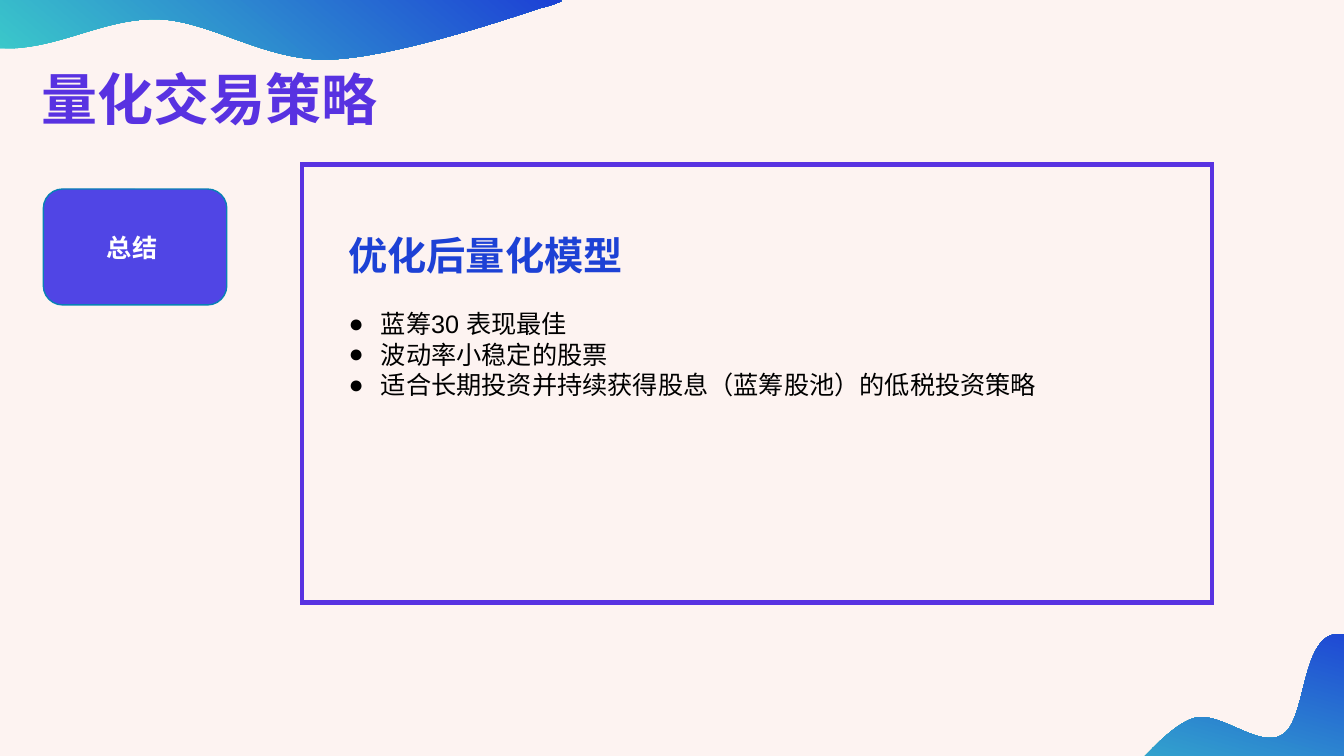
from dataclasses import dataclass
from math import cos, radians, sin

from lxml import etree
from pptx import Presentation
from pptx.dml.color import RGBColor
from pptx.enum.shapes import MSO_SHAPE
from pptx.enum.text import MSO_ANCHOR, MSO_AUTO_SIZE, PP_ALIGN
from pptx.oxml.ns import qn
from pptx.util import Emu, Inches, Pt

RECTANGLE, ROUNDED = MSO_SHAPE.RECTANGLE, MSO_SHAPE.ROUNDED_RECTANGLE
TOP, MIDDLE = MSO_ANCHOR.TOP, MSO_ANCHOR.MIDDLE
LEFT, CENTER = PP_ALIGN.LEFT, PP_ALIGN.CENTER
FIXED = MSO_AUTO_SIZE.NONE

CELL = Inches(0.1)
COLUMNS, ROWS = 133.33, 75
INDENT = Inches(0.32)

Point = tuple[float, float]
Curve = tuple[Point, Point, Point]


@dataclass(frozen=True)
class Theme:
    background: str = "FDF3F1"
    violet: str = "5832E1"
    indigo: str = "5045E5"
    edge: str = "0881B5"
    teal: str = "3BCACA"
    blue: str = "1D41D5"
    white: str = "FFFFFF"
    black: str = "000000"
    title_font: str = "Times New Roman"
    body_font: str = "Arial"
    title_size: float = 40
    heading_size: float = 28
    body_size: float = 18
    list_gap: float = 21.4
    gradient_angle: float = 50


THEME = Theme()


@dataclass(frozen=True)
class Area:
    column: float
    row: float
    columns: float
    rows: float

    def lengths(self) -> list[Emu]:
        return [grid(n) for n in (self.column, self.row, self.columns, self.rows)]


@dataclass(frozen=True)
class Panel:
    kind: MSO_SHAPE
    area: Area
    line: str
    weight: float
    fill: str | None = None
    label: str | None = None


@dataclass(frozen=True)
class Wave:
    start: Point
    curves: tuple[Curve, ...]
    corners: tuple[Point, ...]
    turn: float = 0


@dataclass(frozen=True)
class Line:
    text: str
    size: float
    color: str
    bold: bool = False
    bullet: bool = False
    before: float = 0


WAVES = (
    Wave(
        (55.7, 0.1),
        (
            ((55.5, 0.2), (54.9, 0.5), (53.6, 0.8)),
            ((50.3, 1.9), (39, 5.7), (32.7, 5.9)),
            ((26.3, 6.1), (21, 2.1), (15.7, 1.9)),
            ((10.5, 1.8), (6.5, 4.5), (1.3, 4.8)),
        ),
        ((0, 4.8), (0, 0), (55.6, 0)),
    ),
    Wave(
        (113.4, 75.2),
        (
            ((115.2, 73.3), (117, 71.6), (118.6, 71.2)),
            ((121.1, 70.6), (125, 74.3), (127.2, 72.9)),
            ((129.5, 71.6), (129.1, 64), (132.1, 63)),
            ((132.3, 63), (132.5, 62.9), (132.7, 62.9)),
        ),
        ((COLUMNS, 62.9), (COLUMNS, 75.2)),
        turn=336,
    ),
)
PANELS = (
    Panel(ROUNDED, Area(4.3, 18.75, 18.2, 11.5), THEME.edge, 1, THEME.indigo, "总结 "),
    Panel(RECTANGLE, Area(29.95, 16.3, 90.3, 43.5), THEME.violet, 3.25),
)
TITLE_AREA = Area(3.1, 5.9, 63, 7.7)
SUMMARY_AREA = Area(33.6, 22.5, 75, 23.9)
POINTS = ("蓝筹30 表现最佳", "波动率小稳定的股票", "适合长期投资并持续获得股息（蓝筹股池）的低税投资策略")
SUMMARY = [Line("优化后量化模型", THEME.heading_size, THEME.blue, bold=True)] + [
    Line(text, THEME.body_size, THEME.black, bullet=True, before=0 if n else THEME.list_gap)
    for n, text in enumerate(POINTS)
]


def grid(cells: float) -> Emu:
    return Emu(round(cells * CELL))


def rgb(color: str) -> RGBColor:
    return RGBColor.from_string(color)


def apply(target, values: dict) -> None:
    for name, value in values.items():
        setattr(target, name, value)


def rotate(point: Point, degrees: float) -> Point:
    (x, y), angle = point, radians(degrees)
    return x * cos(angle) - y * sin(angle), x * sin(angle) + y * cos(angle)


def write(para, line: Line, font: str = THEME.body_font, align: PP_ALIGN = LEFT) -> None:
    apply(para, {"alignment": align, "space_before": Pt(line.before)})
    if line.bullet:
        properties = para._p.get_or_add_pPr()
        properties.set("marL", str(INDENT))
        properties.set("indent", str(-INDENT))
        etree.SubElement(properties, qn("a:buFont"), typeface=font)
        etree.SubElement(properties, qn("a:buChar"), char="●")
    span = para.add_run()
    span.text = line.text
    apply(span.font, {"name": font, "size": Pt(line.size), "bold": line.bold})
    span.font.color.rgb = rgb(line.color)


def draw_wave(page, wave: Wave) -> None:
    def level(point: Point) -> tuple[Emu, Emu]:
        x, y = rotate(point, -wave.turn)
        return grid(x), grid(y)

    builder = page.shapes.build_freeform(*level(wave.start))
    ends = [curve[-1] for curve in wave.curves]
    builder.add_line_segments([level(end) for end in (*ends, *wave.corners)], close=True)
    shape = builder.convert_to_shape()
    segments = list(shape._element.iter(qn("a:lnTo")))
    for segment, curve in zip(segments, wave.curves):
        bend = etree.Element(qn("a:cubicBezTo"))
        for x, y in map(level, curve):
            etree.SubElement(bend, qn("a:pt"), x=str(x - shape.left), y=str(y - shape.top))
        segment.getparent().replace(segment, bend)
    middle = (shape.left + shape.width / 2, shape.top + shape.height / 2)
    x, y = rotate(middle, wave.turn)
    place = {"left": Emu(round(x - shape.width / 2)), "top": Emu(round(y - shape.height / 2))}
    apply(shape, {**place, "rotation": wave.turn})
    shape.shadow.inherit = False
    shape.line.fill.background()
    shape.fill.gradient()
    shape.fill.gradient_angle = THEME.gradient_angle
    for stop, color, position in zip(shape.fill.gradient_stops, (THEME.teal, THEME.blue), (0, 1)):
        stop.color.rgb = rgb(color)
        stop.position = position


def draw_panel(page, panel: Panel) -> None:
    shape = page.shapes.add_shape(panel.kind, *panel.area.lengths())
    shape.shadow.inherit = False
    shape.line.color.rgb = rgb(panel.line)
    shape.line.width = Pt(panel.weight)
    etree.SubElement(shape.line._get_or_add_ln(), qn("a:miter"), lim="800000")
    if panel.fill:
        shape.fill.solid()
        shape.fill.fore_color.rgb = rgb(panel.fill)
    else:
        shape.fill.background()
    if panel.label:
        shape.text_frame.vertical_anchor = MIDDLE
        line = Line(panel.label, THEME.body_size, THEME.white, bold=True)
        write(shape.text_frame.paragraphs[0], line, align=CENTER)


def draw_title(page, text: str) -> None:
    title = page.shapes.title
    apply(title, dict(zip(("left", "top", "width", "height"), TITLE_AREA.lengths())))
    apply(title.text_frame, {"vertical_anchor": TOP, "auto_size": FIXED, "word_wrap": True})
    line = Line(text, THEME.title_size, THEME.violet, bold=True)
    write(title.text_frame.paragraphs[0], line, THEME.title_font)


def draw_summary(page) -> None:
    frame = page.shapes.add_textbox(*SUMMARY_AREA.lengths()).text_frame
    frame.word_wrap = True
    for number, line in enumerate(SUMMARY):
        write(frame.add_paragraph() if number else frame.paragraphs[0], line)


def main() -> None:
    deck = Presentation()
    apply(deck, {"slide_width": grid(COLUMNS), "slide_height": grid(ROWS)})
    page = deck.slides.add_slide(deck.slide_layouts.get_by_name("Title Only"))
    page.background.fill.solid()
    page.background.fill.fore_color.rgb = rgb(THEME.background)
    for wave in WAVES:
        draw_wave(page, wave)
    draw_title(page, "量化交易策略")
    for panel in PANELS:
        draw_panel(page, panel)
    draw_summary(page)
    deck.save("out.pptx")


if __name__ == "__main__":
    main()
